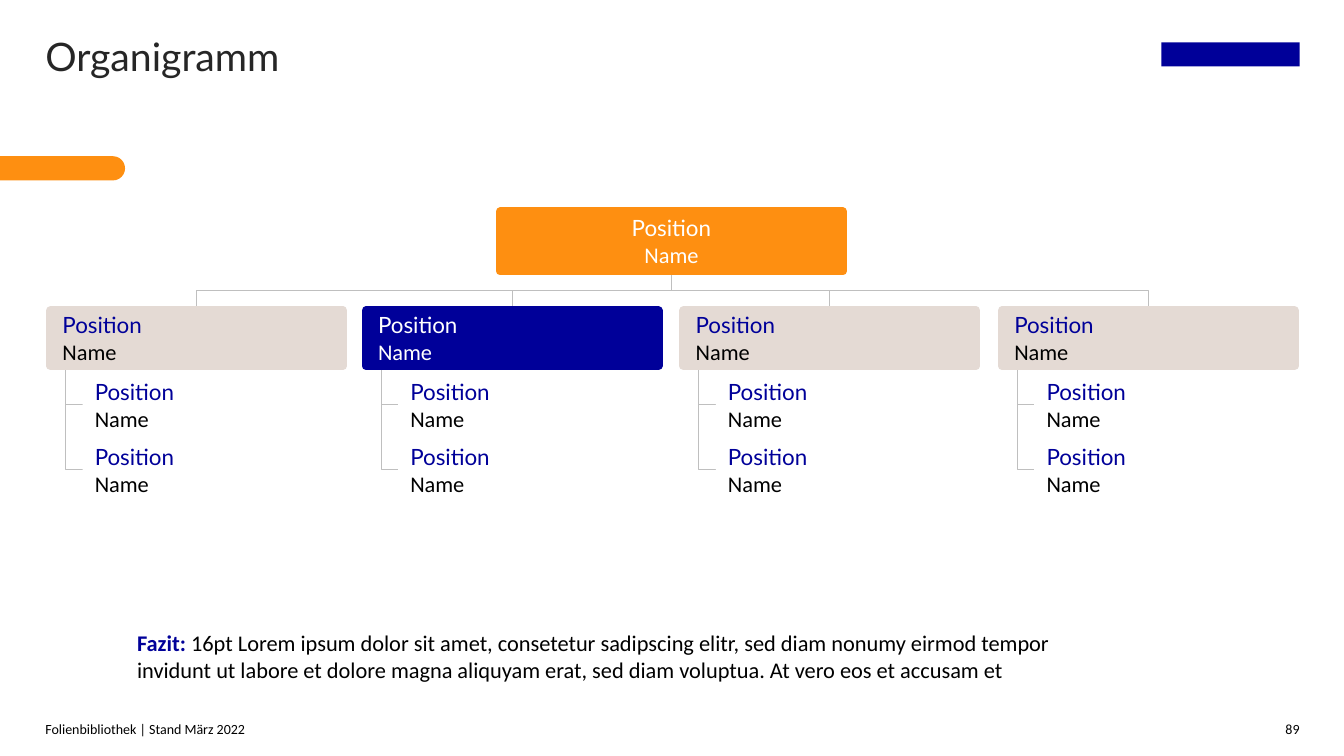
from dataclasses import dataclass

from lxml import etree
from pptx import Presentation
from pptx.dml.color import RGBColor
from pptx.enum.shapes import MSO_CONNECTOR, MSO_SHAPE
from pptx.enum.text import MSO_ANCHOR, PP_ALIGN
from pptx.oxml.ns import qn
from pptx.util import Pt

PX = 9144  # EMU per px, 100 px to the inch
RECTANGLE = MSO_SHAPE.RECTANGLE
PILL = MSO_SHAPE.ROUND_2_SAME_RECTANGLE
ELBOW = MSO_CONNECTOR.ELBOW
LEFT, CENTER, RIGHT = PP_ALIGN.LEFT, PP_ALIGN.CENTER, PP_ALIGN.RIGHT
TOP, MIDDLE, BOTTOM = MSO_ANCHOR.TOP, MSO_ANCHOR.MIDDLE, MSO_ANCHOR.BOTTOM


@dataclass(frozen=True)
class Theme:
    orange: str = "FE8F11"
    navy: str = "000099"
    sand: str = "E4DAD4"
    gray: str = "BFBFBF"
    dark: str = "262626"
    black: str = "000000"
    white: str = "FFFFFF"
    heading_font: str = "Lato"
    body_font: str = "Calibri"
    title_size: int = 28
    text_size: int = 16
    footer_size: int = 10
    connector_width: float = 0.75
    border_width: int = 6


class SlideBuilder:
    def __init__(self, slide, theme):
        self.slide = slide
        self.theme = theme

    def style_font(self, font, name, size, color, bold=False):
        font.name = name
        font.size = Pt(size)
        font.bold = bold
        font.color.rgb = RGBColor.from_string(color)

    def set_frame(self, frame, anchor, inset=0, wrap=True):
        frame.word_wrap = wrap
        frame.vertical_anchor = anchor
        frame.margin_left = frame.margin_right = inset * PX
        frame.margin_top = frame.margin_bottom = inset * PX

    def title(self, text, left, top, width, height):
        shape = self.slide.shapes.title
        shape.left, shape.top = left * PX, top * PX
        shape.width, shape.height = width * PX, height * PX
        self.set_frame(shape.text_frame, TOP)
        paragraph = shape.text_frame.paragraphs[0]
        paragraph.text = text
        paragraph.alignment = LEFT
        self.style_font(paragraph.font, self.theme.heading_font,
                        self.theme.title_size, self.theme.dark)

    def text_box(self, left, top, width, height, anchor, wrap=True):
        shape = self.slide.shapes.add_textbox(left * PX, top * PX, width * PX, height * PX)
        self.set_frame(shape.text_frame, anchor, wrap=wrap)
        return shape.text_frame.paragraphs[0]

    def footer(self, text, left, width, alignment, wrap=True):
        paragraph = self.text_box(left, 716, width, 16, BOTTOM, wrap)
        paragraph.text = text
        paragraph.alignment = alignment
        self.style_font(paragraph.font, self.theme.body_font,
                        self.theme.footer_size, self.theme.black)

    def conclusion(self, label, lines, left, top, width, height):
        paragraph = self.text_box(left, top, width, height, MIDDLE)
        paragraph.space_after = Pt(6)
        self.style_font(paragraph.font, self.theme.body_font,
                        self.theme.text_size, self.theme.black)
        run = paragraph.add_run()
        run.text = label
        self.style_font(run.font, self.theme.body_font,
                        self.theme.text_size, self.theme.navy, bold=True)
        for index, line in enumerate(lines):
            if index:
                paragraph.add_line_break()
            paragraph.add_run().text = line

    def shape(self, kind, left, top, width, height, fill):
        shape = self.slide.shapes.add_shape(
            kind, left * PX, top * PX, width * PX, height * PX)
        shape.shadow.inherit = False
        shape.fill.solid()
        shape.fill.fore_color.rgb = RGBColor.from_string(fill)
        shape.line.fill.background()
        return shape

    def box(self, left, top, width, height, fill, position_color, name_color,
            alignment=LEFT, border=True):
        shape = self.shape(RECTANGLE, left, top, width, height, fill)
        if border:
            # A thick line with round joins softens the corners
            shape.line.color.rgb = RGBColor.from_string(fill)
            shape.line.width = Pt(self.theme.border_width)
            etree.SubElement(shape.line._get_or_add_ln(), qn("a:round"))
        frame = shape.text_frame
        self.set_frame(frame, MIDDLE, inset=12)
        frame.text = "Position\nName"
        fonts = (self.theme.heading_font, self.theme.body_font)
        colors = (position_color, name_color)
        for paragraph, font, color in zip(frame.paragraphs, fonts, colors):
            paragraph.alignment = alignment
            self.style_font(paragraph.font, font, self.theme.text_size, color)

    def elbow(self, start, end, preset):
        """Bent connector that leaves its start downwards: a turned, flipped elbow."""
        (start_x, start_y), (end_x, end_y) = start, end
        center_x, center_y = (start_x + end_x) * PX // 2, (start_y + end_y) * PX // 2
        half_width = (end_y - start_y) * PX // 2
        half_height = abs(end_x - start_x) * PX // 2
        to_right = end_x > start_x
        if to_right:
            half_width = -half_width
        connector = self.slide.shapes.add_connector(
            ELBOW, center_x - half_width, center_y - half_height,
            center_x + half_width, center_y + half_height)
        connector.line.color.rgb = RGBColor.from_string(self.theme.gray)
        connector.line.width = Pt(self.theme.connector_width)
        properties = connector._element.spPr
        properties.find(qn("a:xfrm")).set("rot", "16200000" if to_right else "5400000")
        properties.find(qn("a:prstGeom")).set("prst", preset)
        etree.SubElement(properties, qn("a:effectLst"))


def main():
    theme = Theme()
    presentation = Presentation()
    presentation.slide_width, presentation.slide_height = 1333 * PX, 750 * PX
    slide = presentation.slides.add_slide(presentation.slide_layouts[5])
    builder = SlideBuilder(slide, theme)

    # Branding: orange tab at the edge, plain block in the corner
    tab = builder.shape(PILL, 50, 105, 24, 124, theme.orange)
    tab.adjustments[0] = 0.5
    tab.rotation = 90
    builder.shape(RECTANGLE, 1152, 42, 137, 24, theme.navy)

    # Title and footer
    builder.title("Organigramm", 45, 32, 961, 55)
    builder.footer("Folienbibliothek | Stand März 2022", 45, 1106, LEFT)
    builder.footer("89", 1258, 31, RIGHT, wrap=False)

    # Departments with their connectors and two reports each
    head_top, head_width, head_height = 308, 290, 55
    root_bottom = (666, 268)
    plain = (theme.sand, theme.navy, theme.black)
    accent = (theme.navy, theme.white, theme.white)
    departments = ((50, plain), (363, accent), (678, plain), (994, plain))
    for left, colors in departments:
        builder.elbow(root_bottom, (left + head_width // 2, head_top), "bentConnector3")
        report_left = left + 32
        for report_top in (374, 439):
            builder.elbow((left + 15, head_top + head_height),
                          (report_left, report_top + 27), "bentConnector2")
            builder.box(report_left, report_top, 264, 55, theme.white,
                        theme.navy, theme.black, border=False)
        builder.box(left, head_top, head_width, head_height, *colors)

    # Top position
    builder.box(496, 210, 340, 59, theme.orange, theme.white, theme.white, CENTER)

    # Conclusion
    builder.conclusion("Fazit: ", (
        "16pt Lorem ipsum dolor sit amet, consetetur sadipscing elitr, "
        "sed diam nonumy eirmod tempor",
        "invidunt ut labore et dolore magna aliquyam erat, sed diam voluptua. "
        "At vero eos et accusam et"), 136, 615, 1153, 71)

    presentation.save("out.pptx")


if __name__ == "__main__":
    main()
